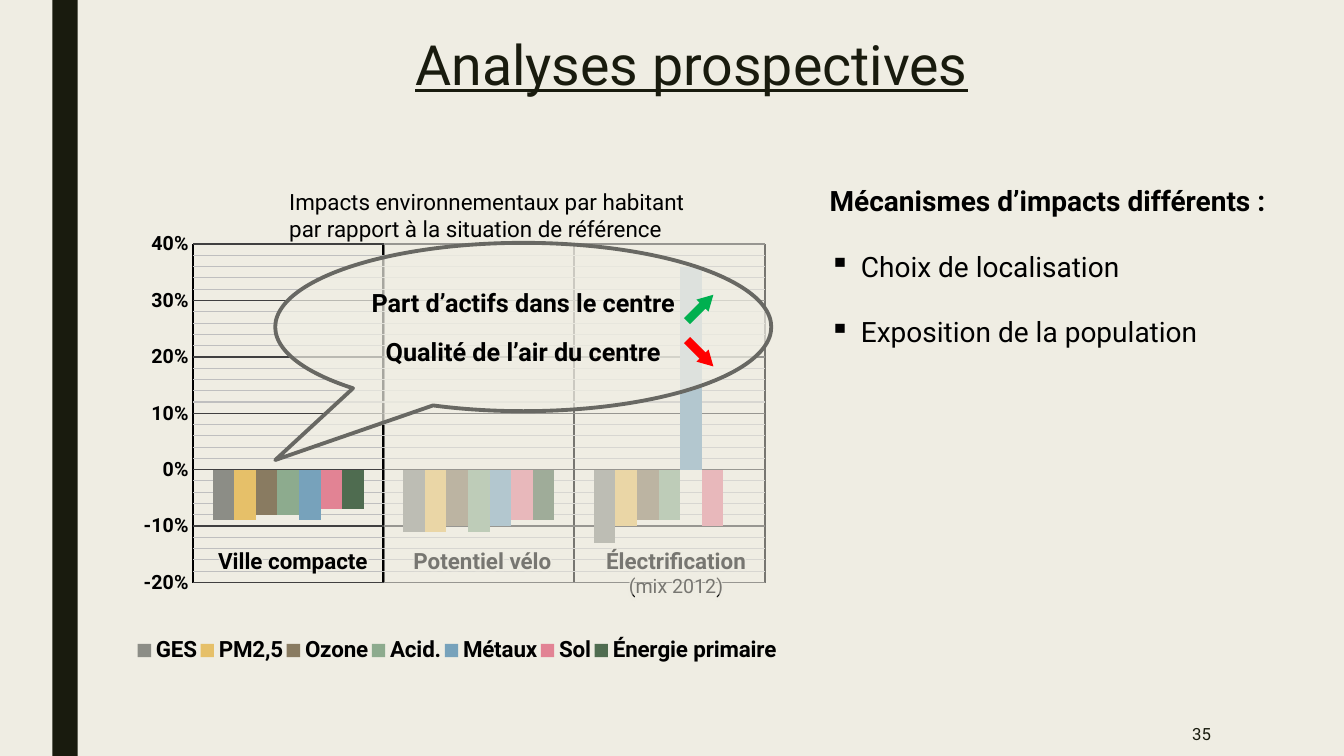
from dataclasses import dataclass

from lxml.etree import SubElement
from pptx import Presentation
from pptx.chart.data import CategoryChartData
from pptx.dml.color import RGBColor
from pptx.enum.chart import XL_CHART_TYPE, XL_LEGEND_POSITION, XL_TICK_MARK
from pptx.enum.shapes import MSO_SHAPE
from pptx.enum.text import MSO_ANCHOR, PP_ALIGN
from pptx.oxml import parse_xml
from pptx.oxml.ns import nsdecls, qn
from pptx.util import Inches, Pt


@dataclass(frozen=True)
class Theme:
    font: str = "Roboto"
    background: str = "EFEDE3"
    dark: str = "191B0E"
    text: str = "000000"
    outline: str = "686863"
    major_grid: str = "404040"
    minor_grid: str = "BFBFBF"
    rise: str = "00B050"
    fall: str = "FF0000"
    title_size: float = 39.6
    body_size: float = 20
    callout_size: float = 18
    label_size: float = 16
    small_size: float = 14
    number_size: float = 12


THEME = Theme()

SERIES = [
    ("GES", (-0.09, -0.11, -0.13), "8C8D86"),
    ("PM2,5", (-0.09, -0.11, -0.10), "E6C069"),
    ("Ozone", (-0.08, -0.10, -0.09), "897B61"),
    ("Acid.", (-0.08, -0.11, -0.09), "8DAB8E"),
    ("Métaux", (-0.09, -0.10, 0.36), "77A2BB"),
    ("Sol", (-0.07, -0.09, -0.10), "E28394"),
    ("Énergie primaire", (-0.07, -0.09, 0), "4F6C50"),
]


def rgb(color):
    return RGBColor.from_string(color)


def set_font(font, size, color=THEME.text, bold=False):
    font.name, font.size, font.bold = THEME.font, Pt(size), bold
    font.color.rgb = rgb(color)


def fill_paragraph(para, text, size, color=THEME.text, bold=False, align=PP_ALIGN.LEFT):
    para.text = text
    para.alignment = align
    set_font(para.font, size, color, bold)


def add_text(page, box, lines, align=PP_ALIGN.LEFT, color=THEME.text):
    """Add a text box; each line is (text, size, bold)."""
    shape = page.shapes.add_textbox(*map(Inches, box))
    frame = shape.text_frame
    frame.word_wrap = True
    for index, (text, size, bold) in enumerate(lines):
        para = frame.add_paragraph() if index else frame.paragraphs[0]
        fill_paragraph(para, text, size, color, bold, align)
    return frame


def add_block(page, preset, box, color, opacity=100):
    shape = page.shapes.add_shape(preset, *map(Inches, box))
    shape.shadow.inherit = False
    shape.fill.solid()
    shape.fill.fore_color.rgb = rgb(color)
    shape.line.fill.background()
    if opacity < 100:
        clr = shape.fill._xPr.find(".//" + qn("a:srgbClr"))
        SubElement(clr, qn("a:alpha")).set("val", str(opacity * 1000))
    return shape


def set_layout(element, x, y, width, height, inner=False):
    """Place a chart part by fractions of the chart area."""
    for old in element.findall(qn("c:layout")):
        element.remove(old)
    target = '<c:layoutTarget val="inner"/>' if inner else ""
    layout = parse_xml(
        f'<c:layout {nsdecls("c")}><c:manualLayout>{target}'
        '<c:xMode val="edge"/><c:yMode val="edge"/>'
        f'<c:x val="{x}"/><c:y val="{y}"/><c:w val="{width}"/><c:h val="{height}"/>'
        "</c:manualLayout></c:layout>")
    if inner:
        element.insert(0, layout)
    else:
        element.find(qn("c:legendPos")).addnext(layout)


def style_grid(gridlines, color, width):
    gridlines.format.line.color.rgb = rgb(color)
    gridlines.format.line.width = Pt(width)


def style_minor_grid(axis, color, width):
    axis.has_minor_gridlines = True
    grid = axis._element.find(qn("c:minorGridlines"))
    grid.append(parse_xml(
        f'<c:spPr {nsdecls("c", "a")}><a:ln w="{Pt(width)}"><a:solidFill>'
        f'<a:srgbClr val="{color}"/></a:solidFill></a:ln></c:spPr>'))


def add_impact_chart(page, box):
    data = CategoryChartData(number_format="0%")
    data.categories = ["1", "2", "3"]
    for name, values, _ in SERIES:
        data.add_series(name, values)
    chart = page.shapes.add_chart(
        XL_CHART_TYPE.COLUMN_CLUSTERED, *map(Inches, box), data).chart
    chart.has_title = False
    set_font(chart.font, 10)
    plot = chart.plots[0]
    plot.gap_width, plot.overlap, plot.vary_by_categories = 182, 0, False
    for series, (_, _, color) in zip(plot.series, SERIES):
        series.invert_if_negative = False
        series.format.fill.solid()
        series.format.fill.fore_color.rgb = rgb(color)

    # Axes and grid
    chart.category_axis.visible = False
    chart.category_axis.has_major_gridlines = True
    style_grid(chart.category_axis.major_gridlines, THEME.text, 1.75)
    axis = chart.value_axis
    axis.minimum_scale, axis.maximum_scale = -0.2, 0.4
    axis.major_unit, axis.minor_unit = 0.1, 0.02
    axis.has_major_gridlines = True
    style_grid(axis.major_gridlines, THEME.major_grid, 1)
    style_minor_grid(axis, THEME.minor_grid, 0.75)
    axis.major_tick_mark = axis.minor_tick_mark = XL_TICK_MARK.NONE
    axis.format.line.fill.background()
    axis.tick_labels.number_format = "0%"
    axis.tick_labels.number_format_is_linked = False
    set_font(axis.tick_labels.font, THEME.small_size, bold=True)

    # Legend and plot area
    chart.has_legend = True
    legend = chart.legend
    legend.position, legend.include_in_layout = XL_LEGEND_POSITION.BOTTOM, False
    set_font(legend.font, THEME.label_size, bold=True)
    set_layout(legend._element, 0, 0.89, 1, 0.08)
    plot_area = chart._chartSpace.find(".//" + qn("c:plotArea"))
    set_layout(plot_area, 0.091, 0.038, 0.885, 0.743, inner=True)


def add_scenario_label(page, box, name, note=None):
    lines = [(name, THEME.label_size, True)]
    if note:
        lines.append((note, THEME.small_size, False))
    frame = add_text(page, box, lines, PP_ALIGN.CENTER)
    # Halo that keeps the grid clear of the letters
    for para in frame.paragraphs:
        for span in para.runs:
            effects = SubElement(span._r.get_or_add_rPr(), qn("a:effectLst"))
            glow = SubElement(effects, qn("a:glow"), rad=str(Pt(5)))
            SubElement(glow, qn("a:srgbClr"), val=THEME.background)


def add_chart_region(page, left, top):
    add_impact_chart(page, (left, top, 6.41, 4.52))
    label_top = top + 3.13
    add_scenario_label(page, (left + 2.58, label_top, 1.75, 0.37), "Potentiel vélo")
    add_scenario_label(page, (left + 4.5, label_top, 1.75, 0.61),
                       "Électrification", "(mix 2012)")
    # Veil over the two other scenarios
    add_block(page, MSO_SHAPE.RECTANGLE, (left + 2.48, top, 3.84, 3.65),
              THEME.background, 50)
    add_callout(page, (left + 1.4, top + 0.16, 4.92, 1.67))
    add_scenario_label(page, (left + 0.7, label_top, 1.75, 0.37), "Ville compacte")
    caption = ("Impacts environnementaux par habitant",
               "par rapport à la situation de référence")
    add_text(page, (left + 1.44, top - 0.43, 4.28, 0.64),
             [(line, THEME.label_size, False) for line in caption])


def add_callout(page, box):
    left, top = box[:2]
    bubble = add_block(page, MSO_SHAPE.OVAL_CALLOUT, box, THEME.background, 70)
    bubble.adjustments[0], bubble.adjustments[1] = -0.5, 0.79
    bubble.line.color.rgb = rgb(THEME.outline)
    bubble.line.width = Pt(2.75)
    frame = bubble.text_frame
    frame.word_wrap, frame.vertical_anchor = True, MSO_ANCHOR.MIDDLE
    trends = [("Part d’actifs dans le centre", 315, THEME.rise),
              ("Qualité de l’air du centre", 45, THEME.fall)]
    for index, (text, angle, color) in enumerate(trends):
        para = frame.add_paragraph() if index else frame.paragraphs[0]
        fill_paragraph(para, text, THEME.callout_size, bold=True, align=PP_ALIGN.CENTER)
        if index:
            para.space_before = Pt(13)
        arrow = add_block(page, MSO_SHAPE.RIGHT_ARROW,
                          (left + 4.03, top + 0.56 + 0.45 * index, 0.37, 0.17), color)
        arrow.adjustments[0], arrow.adjustments[1] = 0.5, 0.9
        arrow.rotation = angle


def add_mechanisms(page, box):
    frame = add_text(page, box, [("Mécanismes d’impacts différents :", THEME.body_size, True)])
    for text in ("Choix de localisation", "Exposition de la population"):
        para = frame.add_paragraph()
        properties = para._p.get_or_add_pPr()
        properties.set("marL", str(Inches(0.31)))
        properties.set("indent", str(-Inches(0.31)))
        SubElement(properties, qn("a:buChar"), char="▪")
        fill_paragraph(para, text, THEME.body_size)
        para.space_before = Pt(23)


def add_title(page, box):
    title = page.shapes.title
    title.left, title.top, title.width, title.height = map(Inches, box)
    title.text_frame.vertical_anchor = MSO_ANCHOR.MIDDLE
    para = title.text_frame.paragraphs[0]
    fill_paragraph(para, "Analyses prospectives", THEME.title_size, THEME.dark,
                   align=PP_ALIGN.CENTER)
    para.font.underline = True
    para.line_spacing = 0.79


def main():
    deck = Presentation()
    deck.slide_width, deck.slide_height = Inches(13.33), Inches(7.5)
    page = deck.slides.add_slide(deck.slide_layouts[5])
    page.background.fill.solid()
    page.background.fill.fore_color.rgb = rgb(THEME.background)
    add_block(page, MSO_SHAPE.RECTANGLE, (0.52, 0, 0.25, 7.5), THEME.dark)
    add_title(page, (1.61, 0.36, 10.5, 0.66))
    add_chart_region(page, 1.33, 2.25)
    add_mechanisms(page, (8.13, 1.77, 5.05, 2.09))
    number = add_text(page, (10.36, 7.06, 1.75, 0.44),
                      [("35", THEME.number_size, False)], PP_ALIGN.RIGHT, THEME.dark)
    number.vertical_anchor = MSO_ANCHOR.MIDDLE
    deck.save("out.pptx")


if __name__ == "__main__":
    main()
